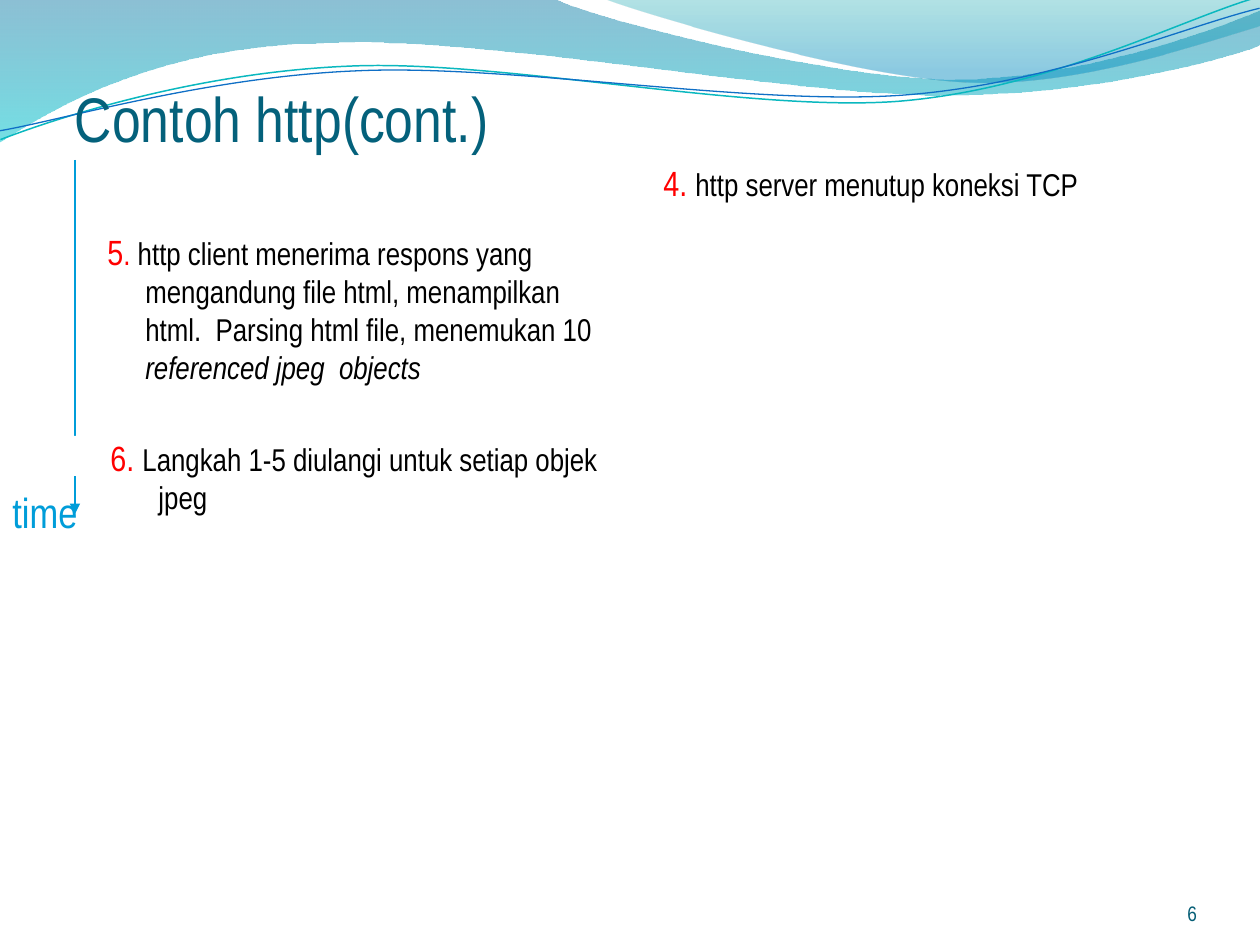
import pptx
import pptx.util
import pptx.dml.color
import pptx.enum.shapes
import pptx.enum.text
import pptx.oxml.ns
import lxml.etree

PX = 914400 / 126
FONT = "Arial Narrow"
RED, BLACK, BLUE = "FF0000", "000000", "009DD9"
TILT = 357.3

# A pair of numbers is a straight step, six numbers are a Bezier step.
# Gradient stops: position %, colour, opacity %.
BANDS = [
    ([(0, 0), (554, -1), (600, 21, 837, 79, 955, 79),
      (1075, 79, 1207, 33, 1260, 11), (1261, 45),
      (1239, 55, 1096, 96, 940, 95), (784, 95, 481, 35, 324, 43),
      (163, 45, 58, 105, -1, 142), (0, 0)],
     [(0, "0074A1", 45), (100, "00C6CF", 55)]),
    ([(604, -1), (641, 14, 859, 78, 969, 82),
      (1079, 87, 1211, 40, 1260, 26), (1260, 0), (604, -1)],
     [(0, "00A1A9", 30), (80, "008BBF", 45)]),
]
# Outline before the tilt, colour, width in points
WAVES = [
    ([(-2, 110), (58, 90, 199, 52, 350, 53), (499, 53, 745, 118, 896, 114),
      (1049, 109, 1184, 45, 1260, 27)], "0AB8BF", 0.85),
    ([(-2, 101), (57, 94, 207, 57, 357, 58), (509, 58, 750, 112, 902, 108),
      (1052, 104, 1188, 52, 1262, 38)], "0F6FC6", 0.75),
]
# Box in px, hanging indent in px, runs of (text, size, colour, italic)
STEPS = [
    ((95, 224, 525, 212), 38, [
        ("5", 20, RED, False), (".", 18, RED, False),
        (" http client menerima respons yang mengandung file html, "
         "menampilkan html.  Parsing html file, menemukan 10 ", 18, BLACK, False),
        ("referenced jpeg  objects", 18, BLACK, True)]),
    ((98, 430, 525, 92), 48, [
        ("6. ", 20, RED, False),
        ("Langkah 1-5 diulangi untuk setiap objek jpeg", 18, BLACK, False)]),
    ((651, 155, 525, 101), 48, [
        ("4. ", 20, RED, False),
        ("http server menutup koneksi TCP", 18, BLACK, False)]),
]
TITLE = ((75, 35, 1071, 120), [("Contoh http(cont.)", 36, "04617B", False)])
PAGE = ((1092, 876, 105, 50), [("6", 12, "045D75", False)])
TIME = ((0, 480, 112, 63), [("time", 24, BLUE, False)])
ARROW = (75, 160, 75, 514)
GAP = (42, 436, 48, 40)


def emu(*nums):
    return [pptx.util.Emu(round(n * PX)) for n in nums]


def rgb(code):
    return pptx.dml.color.RGBColor.from_string(code)


def add(parent, tag, **attrs):
    return lxml.etree.SubElement(parent, pptx.oxml.ns.qn(tag), attrs)


def draw(shapes, steps, close):
    """Lay out all points as lines, then join each Bezier step's three."""
    first, *rest = [emu(*step[i:i + 2]) for step in steps
                    for i in range(0, len(step), 2)]
    pen = shapes.build_freeform(*first, scale=1.0)
    pen.add_line_segments(rest, close=close)
    shape = pen.convert_to_shape()
    shape.shadow.inherit = False
    lines = iter(shape._element.findall(".//" + pptx.oxml.ns.qn("a:lnTo")))
    for step in steps[1:]:
        line = next(lines)
        if len(step) == 6:
            curve = lxml.etree.Element(pptx.oxml.ns.qn("a:cubicBezTo"))
            line.addprevious(curve)
            for part in (line, next(lines), next(lines)):
                curve.append(part[0])
                part.getparent().remove(part)
    return shape


def shade(shape, stops):
    """Fill from top to bottom with partly clear colours."""
    shape.line.fill.background()
    shape.fill.gradient()
    shape.fill.gradient_angle = 270
    stop_list = shape._element.find(".//" + pptx.oxml.ns.qn("a:gsLst"))
    stop_list.clear()
    for place, code, alpha in stops:
        stop = add(stop_list, "a:gs", pos=str(place * 1000))
        color = add(stop, "a:srgbClr", val=code)
        add(color, "a:alpha", val=str(alpha * 1000))


def write(shapes, box, runs, wrap=True):
    frame = shapes.add_textbox(*emu(*box)).text_frame
    frame.word_wrap = wrap
    para = frame.paragraphs[0]
    for text, size, code, slant in runs:
        run = para.add_run()
        run.text = text
        font = run.font
        font.name, font.size, font.italic = FONT, pptx.util.Pt(size), slant
        font.color.rgb = rgb(code)
    return frame


def sit(frame, top=0):
    """Set text on the bottom edge of its box, without side margins."""
    frame.vertical_anchor = pptx.enum.text.MSO_ANCHOR.BOTTOM
    frame.margin_left = frame.margin_right = frame.margin_bottom = 0
    frame.margin_top = emu(top)[0]


def main():
    deck = pptx.Presentation()
    deck.slide_width, deck.slide_height = emu(1260, 945)
    shapes = deck.slides.add_slide(deck.slide_layouts[6]).shapes

    for steps, stops in BANDS:
        shade(draw(shapes, steps, True), stops)
    for steps, code, width in WAVES:
        wave = draw(shapes, steps, False)
        wave.rotation = TILT
        wave.fill.background()
        wave.line.color.rgb = rgb(code)
        wave.line.width = pptx.util.Pt(width)

    sit(write(shapes, *TITLE), 6)
    page = write(shapes, *PAGE)
    sit(page)
    page.paragraphs[0].alignment = pptx.enum.text.PP_ALIGN.RIGHT

    for box, hang, runs in STEPS:
        para = write(shapes, box, runs).paragraphs[0]
        para.space_before = pptx.util.Pt(4)
        props = para._p.get_or_add_pPr()
        props.set("marL", str(emu(hang)[0]))
        props.set("indent", str(emu(-hang)[0]))

    arrow = shapes.add_connector(pptx.enum.shapes.MSO_CONNECTOR.STRAIGHT, *emu(*ARROW))
    arrow.line.color.rgb = rgb(BLUE)
    arrow.line.width = pptx.util.Pt(1.5)
    add(arrow.line._get_or_add_ln(), "a:tailEnd", type="triangle")
    add(arrow._element.spPr, "a:effectLst")

    gap = shapes.add_shape(pptx.enum.shapes.MSO_SHAPE.RECTANGLE, *emu(*GAP))
    gap.shadow.inherit = False
    gap.fill.solid()
    gap.fill.fore_color.rgb = rgb("FFFFFF")
    gap.line.fill.background()

    write(shapes, *TIME, wrap=False)
    deck.save("out.pptx")


if __name__ == "__main__":
    main()
